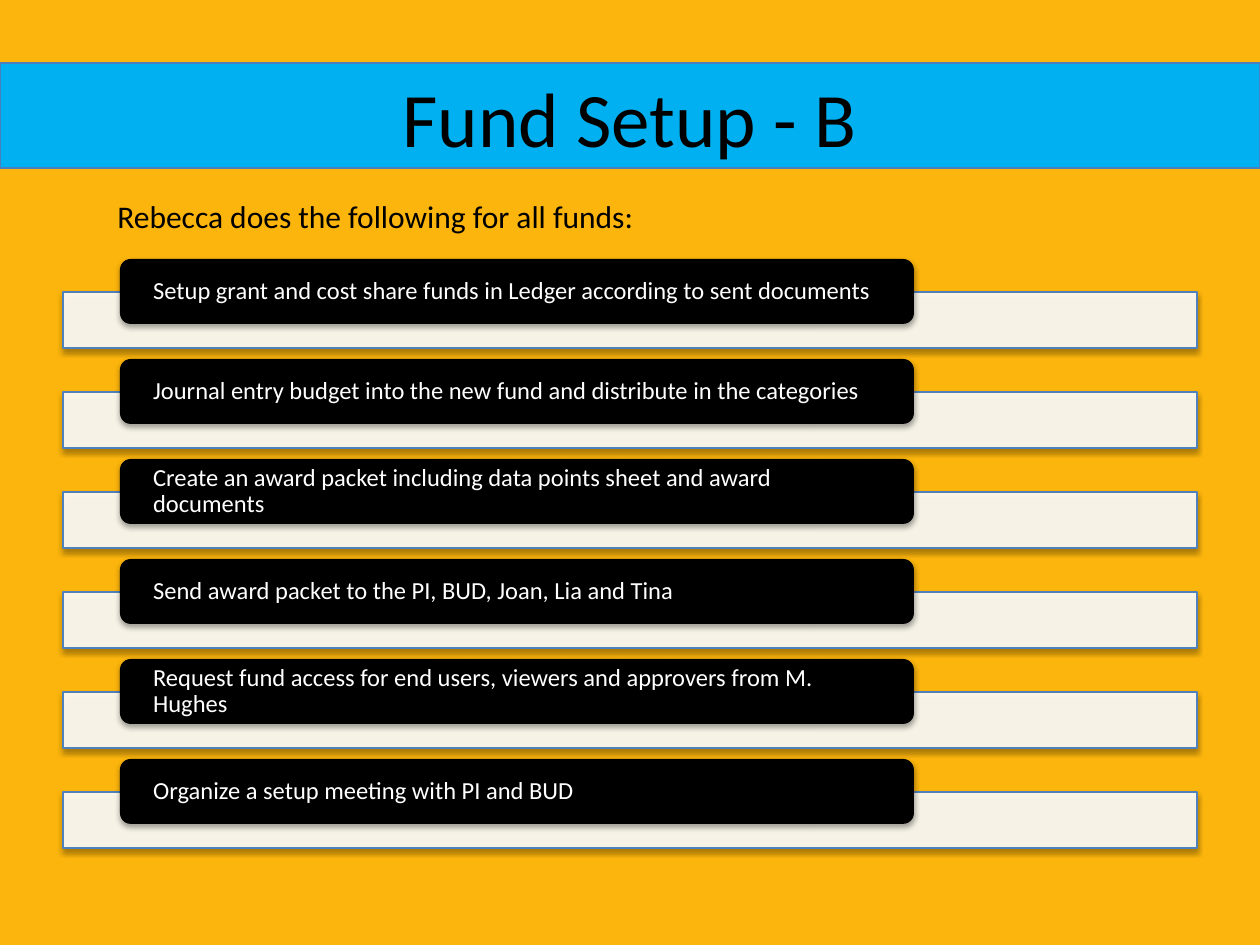
"""Build the Fund Setup - B slide: a title band and six task rows."""
from lxml import etree
from pptx import Presentation
from pptx import util as u
from pptx.dml.color import RGBColor
from pptx.enum import shapes, text
from pptx.oxml.ns import qn

PX = 914400 / 126
FONT = "Calibri"
COLORS = {
    "background": "FCB50C",
    "band": "00B0F0",
    "band_line": "4B7EBC",
    "bar": "FFFFFF",
    "bar_line": "4F81BD",
    "black": "000000",
    "white": "FFFFFF",
}
TASKS = [
    "Setup grant and cost share funds in Ledger according to sent documents",
    "Journal entry budget into the new fund and distribute in the categories",
    "Create an award packet including data points sheet and award documents",
    "Send award packet to the PI, BUD, Joan, Lia and Tina",
    "Request fund access for end users, viewers and approvers from M. Hughes",
    "Organize a setup meeting with PI and BUD",
]
FIRST_ROW_TOP = 259
ROW_PITCH = 100


def px(value):
    return u.Emu(round(value * PX))


def color(name):
    return RGBColor.from_string(COLORS[name])


def add_box(slide, kind, box, fill, line=None):
    shape = slide.shapes.add_shape(kind, *map(px, box))
    shape.shadow.inherit = False
    shape.fill.solid()
    shape.fill.fore_color.rgb = color(fill)
    if line:
        shape.line.color.rgb = color(line)
        shape.line.width = u.Pt(0.75)
    else:
        shape.line.fill.background()
    return shape


def set_alpha(color_element, percent):
    etree.SubElement(color_element, qn("a:alpha"), val=str(percent * 1000))


def add_shadow(shape):
    effects = shape._element.spPr.find(qn("a:effectLst"))
    shadow = etree.SubElement(
        effects, qn("a:outerShdw"), blurRad=str(u.Pt(3.1)),
        dist=str(u.Pt(1.8)), dir="5400000", rotWithShape="0")
    shade = etree.SubElement(shadow, qn("a:srgbClr"), val=COLORS["black"])
    set_alpha(shade, 35)


def write(shape, words, size, ink, align=text.PP_ALIGN.LEFT):
    frame = shape.text_frame
    frame.text = words
    paragraph = frame.paragraphs[0]
    paragraph.alignment = align
    font = paragraph.runs[0].font
    font.name = FONT
    font.size = u.Pt(size)
    font.color.rgb = color(ink)
    return frame


def add_title(slide):
    add_box(slide, shapes.MSO_SHAPE.RECTANGLE, (0, 63, 1260, 105),
            "band", "band_line")
    title = slide.shapes.add_textbox(*map(px, (63, 38, 1134, 157)))
    frame = write(title, "Fund Setup - B", 44, "black", text.PP_ALIGN.CENTER)
    frame.word_wrap = True
    frame.vertical_anchor = text.MSO_ANCHOR.MIDDLE


def add_intro(slide):
    intro = slide.shapes.add_textbox(*map(px, (105, 191, 556, 51)))
    frame = write(intro, "Rebecca does the following for all funds:", 18, "black")
    frame.word_wrap = False
    frame.auto_size = text.MSO_AUTO_SIZE.SHAPE_TO_FIT_TEXT


def add_task(slide, top, words):
    bar = add_box(slide, shapes.MSO_SHAPE.RECTANGLE, (63, top + 33, 1134, 56),
                  "bar", "bar_line")
    set_alpha(bar._element.spPr.find(qn("a:solidFill"))[0], 90)
    add_shadow(bar)

    label = add_box(slide, shapes.MSO_SHAPE.ROUNDED_RECTANGLE,
                    (120, top, 794, 65), "black")
    add_shadow(label)
    frame = write(label, words, 14, "white")
    frame.word_wrap = True
    frame.vertical_anchor = text.MSO_ANCHOR.MIDDLE
    frame.margin_left = frame.margin_right = px(30)
    frame.margin_top = frame.margin_bottom = 0
    frame.paragraphs[0].line_spacing = 0.9


def main():
    presentation = Presentation()
    presentation.slide_width = px(1260)
    presentation.slide_height = px(945)
    slide = presentation.slides.add_slide(presentation.slide_layouts[6])
    slide.background.fill.solid()
    slide.background.fill.fore_color.rgb = color("background")
    add_title(slide)
    for row, words in enumerate(TASKS):
        add_task(slide, FIRST_ROW_TOP + row * ROW_PITCH, words)
    add_intro(slide)
    presentation.save("out.pptx")


if __name__ == "__main__":
    main()
